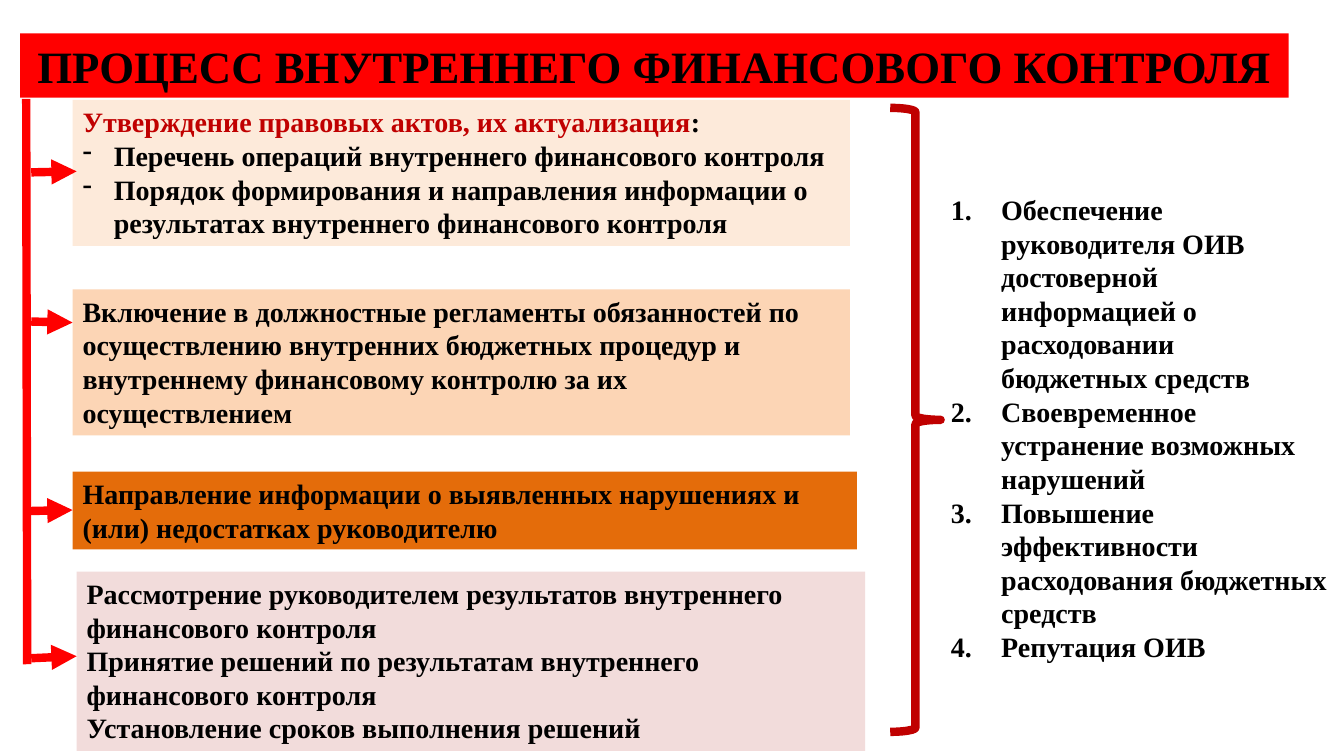
from lxml.etree import SubElement
from pptx import Presentation
from pptx.dml.color import RGBColor
from pptx.enum.shapes import MSO_CONNECTOR, MSO_SHAPE
from pptx.enum.text import MSO_ANCHOR, MSO_AUTO_SIZE, PP_ALIGN
from pptx.oxml.ns import qn
from pptx.util import Inches, Pt

COLORS = {
    "red": "FF0000", "dark_red": "C00000", "black": "000000",
    "cream": "FDEADA", "peach": "FCD5B5", "orange": "E46C0A", "pink": "F2DCDB",
}
FONT = "Times New Roman"
LINE_WIDTH = Pt(6)

TITLE = "ПРОЦЕСС ВНУТРЕННЕГО ФИНАНСОВОГО КОНТРОЛЯ"
TITLE_BOX = (0.2, 0.33, 12.58, 0.64)

# Each paragraph: list of (text, colour) runs, and whether it has a dash
STEPS = [
    ("cream", (0.72, 0.99, 7.71, 1.45), [
        ([("Утверждение правовых актов, их актуализация", "dark_red"), (":", "black")], False),
        ([("Перечень операций внутреннего финансового контроля", "black")], True),
        ([("Порядок формирования и направления информации о результатах "
           "внутреннего финансового контроля", "black")], True),
    ]),
    ("peach", (0.72, 2.87, 7.71, 1.45), [
        ([("Включение в должностные регламенты обязанностей по осуществлению "
           "внутренних бюджетных процедур и внутреннему финансовому контролю "
           "за их осуществлением", "black")], False),
    ]),
    ("orange", (0.72, 4.68, 7.78, 0.77), [
        ([("Направление информации о выявленных нарушениях и (или) "
           "недостатках руководителю", "black")], False),
    ]),
    ("pink", (0.76, 5.67, 7.82, 1.78), [
        ([("Рассмотрение руководителем результатов внутреннего "
           "финансового контроля", "black")], False),
        ([("Принятие решений по результатам внутреннего "
           "финансового контроля", "black")], False),
        ([("Установление сроков выполнения решений", "black")], False),
    ]),
]

TRUNK = (0.26, 0.98, 0.27, 6.59)
ARROWS = [
    (0.31, 1.71, 0.76, 1.7),
    (0.31, 3.19, 0.72, 3.2),
    (0.29, 5.07, 0.72, 5.06),
    (0.31, 6.53, 0.76, 6.51),
]
BRACE_BOX = (8.83, 1.07, 0.5, 6.19)

RESULTS_BOX = (9.33, 1.86, 3.93, 4.81)
RESULTS = [
    "Обеспечение руководителя ОИВ достоверной информацией о расходовании бюджетных средств",
    "Своевременное устранение возможных нарушений",
    "Повышение эффективности расходования бюджетных средств",
    "Репутация ОИВ",
]


def rgb(name):
    return RGBColor.from_string(COLORS[name])


def place(sp, box):
    sp.left, sp.top, sp.width, sp.height = map(Inches, box)


def set_frame(tf, anchor):
    tf.word_wrap = True
    tf.auto_size = MSO_AUTO_SIZE.NONE
    tf.vertical_anchor = anchor


def format_run(r, color="black", size=20):
    r.font.name = FONT
    r.font.size = Pt(size)
    r.font.bold = True
    r.font.color.rgb = rgb(color)


def add_marker(p, indent, tag, **attributes):
    """Give the paragraph a hanging indent and a bullet or number."""
    pPr = p._p.get_or_add_pPr()
    pPr.set("marL", str(Inches(indent)))
    pPr.set("indent", str(-Inches(indent)))
    SubElement(pPr, qn("a:buFontTx"))
    SubElement(pPr, qn(tag), attributes)


def add_step(slide, fill, box, paragraphs):
    sp = slide.shapes.add_shape(MSO_SHAPE.RECTANGLE, *map(Inches, box))
    sp.shadow.inherit = False
    sp.fill.solid()
    sp.fill.fore_color.rgb = rgb(fill)
    sp.line.fill.background()
    tf = sp.text_frame
    set_frame(tf, MSO_ANCHOR.TOP)
    for i, (runs, dashed) in enumerate(paragraphs):
        p = tf.paragraphs[0] if i == 0 else tf.add_paragraph()
        if dashed:
            add_marker(p, 0.31, "a:buChar", char="-")
        p.alignment = PP_ALIGN.LEFT
        for text, color in runs:
            r = p.add_run()
            r.text = text
            format_run(r, color)


def add_line(slide, ends, arrow=False):
    line = slide.shapes.add_connector(MSO_CONNECTOR.STRAIGHT, *map(Inches, ends))
    line.line.color.rgb = rgb("red")
    line.line.width = LINE_WIDTH
    if arrow:
        SubElement(line.line._get_or_add_ln(), qn("a:tailEnd"), type="triangle")
    SubElement(line._element.spPr, qn("a:effectLst"))


def main():
    prs = Presentation()
    prs.slide_width, prs.slide_height = Inches(13.33), Inches(7.5)
    slide = prs.slides.add_slide(prs.slide_layouts[1])
    title, results = slide.placeholders

    place(title, TITLE_BOX)
    title.fill.solid()
    title.fill.fore_color.rgb = rgb("red")
    title.text_frame.text = TITLE
    set_frame(title.text_frame, MSO_ANCHOR.TOP)
    p = title.text_frame.paragraphs[0]
    p.alignment = PP_ALIGN.CENTER
    format_run(p.runs[0], size=32)

    for step in STEPS:
        add_step(slide, *step)

    add_line(slide, TRUNK)
    for ends in ARROWS:
        add_line(slide, ends, arrow=True)

    brace = slide.shapes.add_shape(MSO_SHAPE.RIGHT_BRACE, *map(Inches, BRACE_BOX))
    brace.shadow.inherit = False
    brace.fill.background()
    brace.line.color.rgb = rgb("dark_red")
    brace.line.width = LINE_WIDTH

    place(results, RESULTS_BOX)
    tf = results.text_frame
    set_frame(tf, MSO_ANCHOR.TOP)
    tf.text = "\n".join(RESULTS)
    for p in tf.paragraphs:
        add_marker(p, 0.5, "a:buAutoNum", type="arabicPeriod")
        p.space_before = Pt(0)
        format_run(p.runs[0])

    prs.save("out.pptx")


if __name__ == "__main__":
    main()
